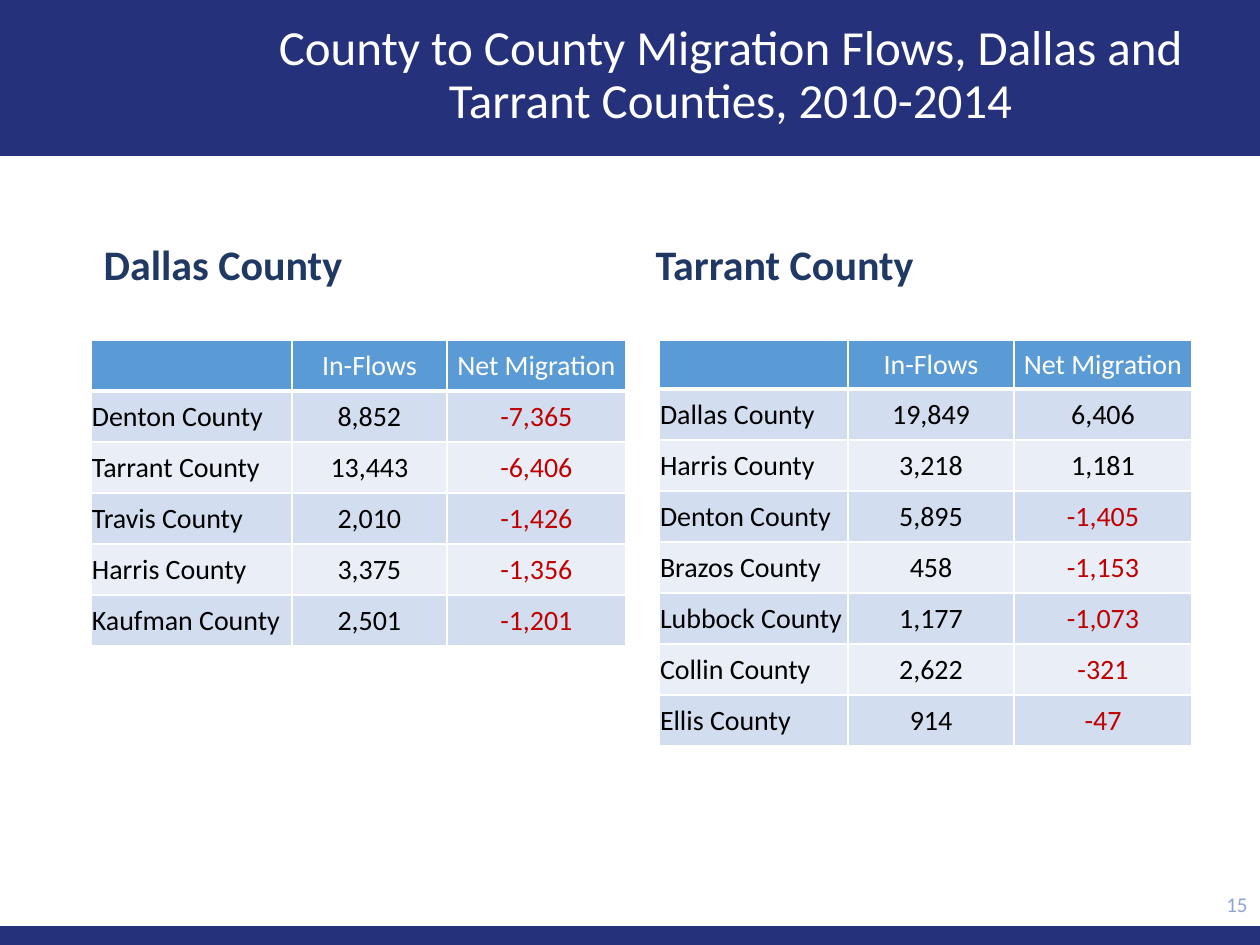
import pptx
import pptx.util
import pptx.dml.color
import pptx.enum.shapes
import pptx.enum.text
import pptx.oxml
import pptx.oxml.ns

PX = 914400 / 126
COLORS = {"navy": "25327B", "heading": "203864", "header": "5B9BD5",
          "band": "D2DEEF", "light": "EAEFF7", "white": "FFFFFF",
          "black": "000000", "negative": "C00000", "number": "8FA5D1"}
ALIGN = pptx.enum.text.PP_ALIGN
ANCHOR = pptx.enum.text.MSO_ANCHOR


def emu(*lengths):
    return [pptx.util.Emu(round(n * PX)) for n in lengths]


def write(tf, text, size=16, color="black", bold=False, align=ALIGN.LEFT,
          anchor=ANCHOR.MIDDLE, spacing=None):
    tf.word_wrap = True
    tf.vertical_anchor = anchor
    p = tf.paragraphs[0]
    p.alignment = align
    p.line_spacing = spacing
    p.space_before = pptx.util.Pt(0)
    r = p.add_run()
    r.text = text
    r.font.name = "Calibri"
    r.font.size = pptx.util.Pt(size)
    r.font.bold = bold
    r.font.color.rgb = pptx.dml.color.RGBColor.from_string(COLORS[color])


prs = pptx.Presentation()
prs.slide_width, prs.slide_height = emu(1260, 945)
s = prs.slides.add_slide(prs.slide_layouts[4])  # Comparison
holders = {ph.placeholder_format.idx: ph for ph in s.placeholders}

# Top and bottom bands, behind the placeholders
for i, (top, height) in enumerate([(0, 156), (926, 19)]):
    sp = s.shapes.add_shape(pptx.enum.shapes.MSO_SHAPE.RECTANGLE,
                            *emu(0, top, 1260, height))
    sp.shadow.inherit = False
    sp.fill.solid()
    sp.fill.fore_color.rgb = pptx.dml.color.RGBColor.from_string(COLORS["navy"])
    sp.line.fill.background()
    s.shapes._spTree.insert(2 + i, sp._element)

# Title
title = s.shapes.title
title.left, title.top, title.width, title.height = emu(214, 13, 1033, 126)
title.text_frame.auto_size = pptx.enum.text.MSO_AUTO_SIZE.NONE
write(title.text_frame, "County to County Migration Flows, Dallas and Tarrant Counties, 2010-2014",
      size=28, color="white", align=ALIGN.CENTER, spacing=0.9)

# County headings and tables
counties = [
    {"name": "Dallas County", "idx": 1, "heading": (91, 183, 534, 113),
     "left": 91, "cols": (201, 155, 179), "header": 51,
     "rows": [("Denton County", "8,852", "-7,365"),
              ("Tarrant County", "13,443", "-6,406"),
              ("Travis County", "2,010", "-1,426"),
              ("Harris County", "3,375", "-1,356"),
              ("Kaufman County", "2,501", "-1,201")]},
    {"name": "Tarrant County", "idx": 3, "heading": (643, 183, 535, 113),
     "left": 659, "cols": (189, 166, 178), "header": 49,
     "rows": [("Dallas County", "19,849", "6,406"),
              ("Harris County", "3,218", "1,181"),
              ("Denton County", "5,895", "-1,405"),
              ("Brazos County", "458", "-1,153"),
              ("Lubbock County", "1,177", "-1,073"),
              ("Collin County", "2,622", "-321"),
              ("Ellis County", "914", "-47")]},
]
for county in counties:
    sp = holders[county["idx"]]
    sp.left, sp.top, sp.width, sp.height = emu(*county["heading"])
    sp.text_frame.auto_size = pptx.enum.text.MSO_AUTO_SIZE.NONE
    write(sp.text_frame, county["name"], size=24, color="heading", bold=True,
          anchor=ANCHOR.BOTTOM, spacing=0.9)

    rows = [("", "In-Flows", "Net Migration")] + county["rows"]
    heights = [county["header"]] + [51] * len(county["rows"])
    table = s.shapes.add_table(len(rows), 3, *emu(
        county["left"], 340, sum(county["cols"]), sum(heights))).table
    for column, width in zip(table.columns, emu(*county["cols"])):
        column.width = width
    for row, height in zip(table.rows, emu(*heights)):
        row.height = height

    for i, values in enumerate(rows):
        for j, value in enumerate(values):
            cell = table.cell(i, j)
            cell.margin_left, cell.margin_top, cell.margin_right, cell.margin_bottom = emu(1, 1, 1, 0)
            # White borders, thicker under the header row
            for side in "LRTB":
                thick = (i, side) in [(0, "B"), (1, "T")]
                cell._tc.get_or_add_tcPr().append(pptx.oxml.parse_xml(
                    f'<a:ln{side} {pptx.oxml.ns.nsdecls("a")} w="{38100 if thick else 12700}">'
                    f'<a:solidFill><a:srgbClr val="{COLORS["white"]}"/></a:solidFill></a:ln{side}>'))
            fill = "header" if i == 0 else "band" if i % 2 else "light"
            cell.fill.solid()
            cell.fill.fore_color.rgb = pptx.dml.color.RGBColor.from_string(COLORS[fill])
            if value:
                color = "white" if i == 0 else "negative" if value.startswith("-") else "black"
                cell.vertical_anchor = ANCHOR.MIDDLE
                write(cell.text_frame, value, color=color,
                      align=ALIGN.CENTER if j else ALIGN.LEFT)

# Unused content placeholders
for idx in (2, 4):
    holders[idx]._element.getparent().remove(holders[idx]._element)

# Slide number
sp = s.shapes.add_textbox(*emu(1148, 883, 112, 43))
write(sp.text_frame, "15", size=12, color="number", align=ALIGN.RIGHT)

prs.save("out.pptx")
